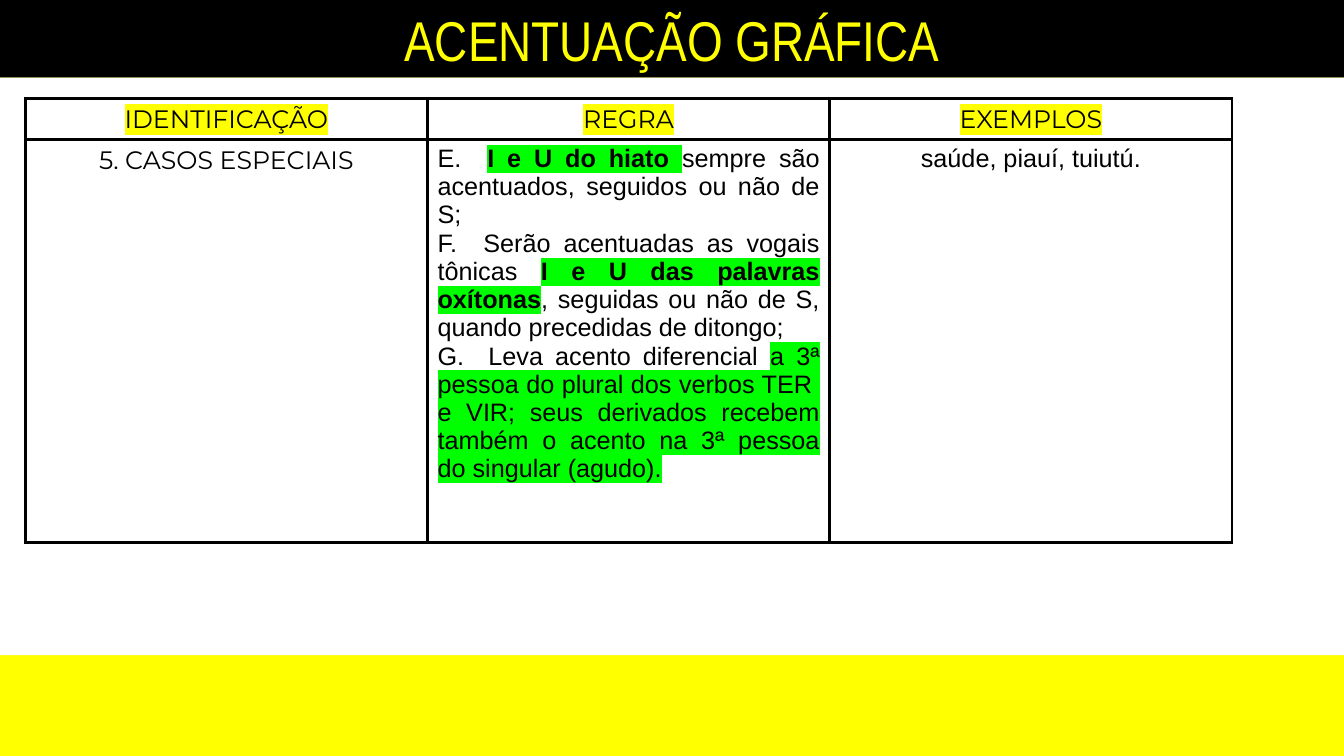
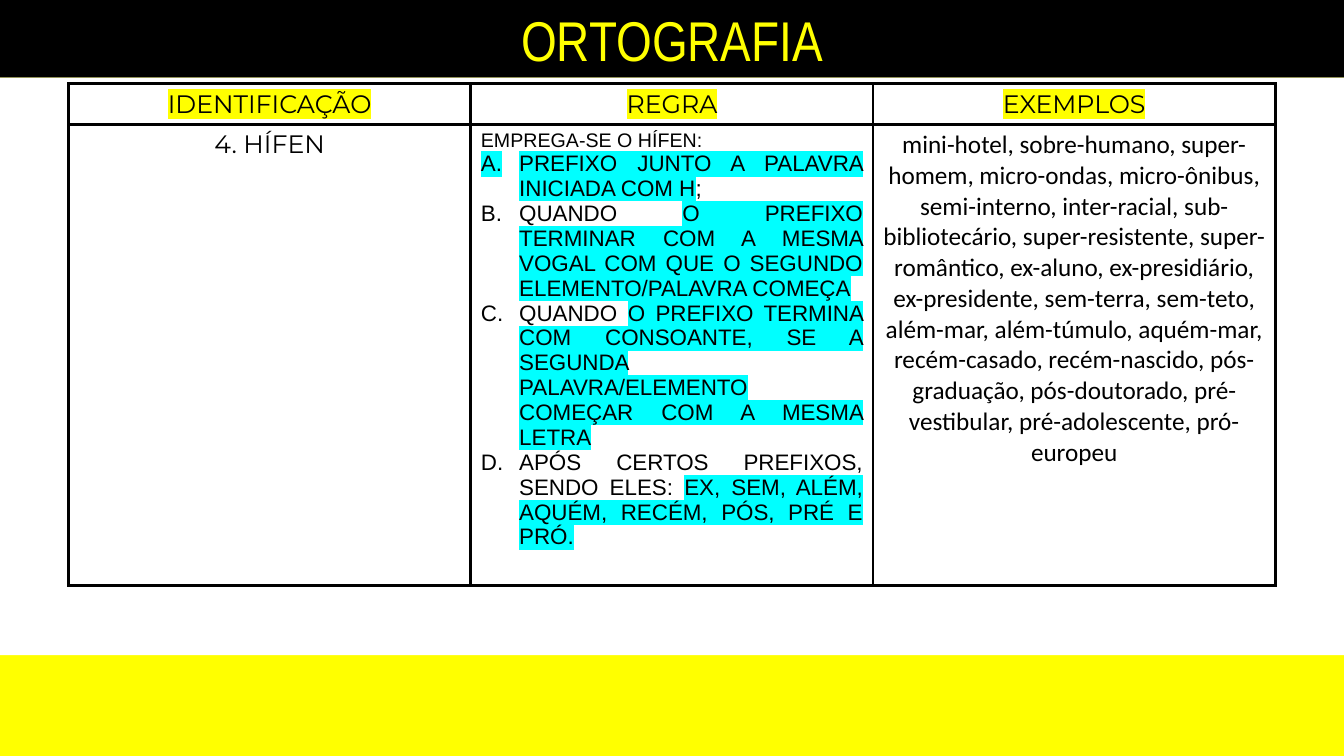
"""Build two Portuguese grammar slides, each a titled table of rules and examples."""
from dataclasses import dataclass
from typing import Optional

from lxml.etree import SubElement
from pptx import Presentation
from pptx.dml.color import RGBColor
from pptx.enum.shapes import MSO_SHAPE
from pptx.enum.text import MSO_ANCHOR, MSO_AUTO_SIZE, PP_ALIGN
from pptx.oxml.ns import qn
from pptx.util import Inches, Pt

BLACK, WHITE, YELLOW = "000000", "FFFFFF", "FFFF00"
GREEN, CYAN = "00FF00", "00FFFF"
WIDTH, HEIGHT = 13.33, 7.5
BAND_HEIGHT, PANEL_BOTTOM = 0.77, 6.5
COLUMN_WIDTH, HEADER_HEIGHT = 3.99, 0.4
LIST_INDENT = 0.38
BORDER_POINTS = 2.25
HEADINGS = ("IDENTIFICAÇÃO", "REGRA", "EXEMPLOS")


@dataclass(frozen=True)
class Span:
    text: str
    highlight: Optional[str] = None
    bold: bool = False


@dataclass(frozen=True)
class Line:
    spans: tuple[Span, ...]
    size: int = 18
    font: str = "Arial"
    align: PP_ALIGN = PP_ALIGN.JUSTIFY
    lettered: bool = False


@dataclass(frozen=True)
class Lesson:
    title: str
    left: float
    top: float
    body_height: float
    topic: str
    rules: tuple[Line, ...]
    examples: Line


def rgb(code: str) -> RGBColor:
    return RGBColor.from_string(code)


def paint(target, code: str) -> None:
    target.fill.solid()
    target.fill.fore_color.rgb = rgb(code)


def add_text(paragraph, text: str, *, size: int, font: str, color: str = BLACK,
             bold: bool = False, highlight: Optional[str] = None) -> None:
    run = paragraph.add_run()
    run.text = text
    run.font.size, run.font.name, run.font.bold = Pt(size), font, bold
    run.font.color.rgb = rgb(color)
    if highlight:
        properties = run.font._element
        marker = SubElement(properties, qn("a:highlight"))
        SubElement(marker, qn("a:srgbClr"), val=highlight)
        properties.find(qn("a:solidFill")).addnext(marker)


def letter(paragraph) -> None:
    properties = paragraph._p.get_or_add_pPr()
    properties.set("marL", str(Inches(LIST_INDENT)))
    properties.set("indent", str(-Inches(LIST_INDENT)))
    SubElement(properties, qn("a:buFont"), typeface="+mj-lt")
    SubElement(properties, qn("a:buAutoNum"), type="alphaUcPeriod")


def fill_cell(cell, lines: tuple[Line, ...]) -> None:
    properties = cell._tc.get_or_add_tcPr()
    for side in ("lnL", "lnR", "lnT", "lnB"):
        border = SubElement(properties, qn(f"a:{side}"), w=str(Pt(BORDER_POINTS)))
        SubElement(SubElement(border, qn("a:solidFill")), qn("a:srgbClr"), val=BLACK)
    paint(cell, WHITE)
    for index, line in enumerate(lines):
        frame = cell.text_frame
        paragraph = frame.add_paragraph() if index else frame.paragraphs[0]
        paragraph.alignment = line.align
        if line.lettered:
            letter(paragraph)
        for span in line.spans:
            add_text(paragraph, span.text, size=line.size, font=line.font,
                     bold=span.bold, highlight=span.highlight)


def centred(text: str, font: str = "Montserrat", highlight: Optional[str] = None) -> Line:
    return Line((Span(text, highlight),), font=font, align=PP_ALIGN.CENTER)


def item(*spans: Span) -> Line:
    return Line(spans, size=16, lettered=True)


def add_frame(slide, title: str) -> None:
    panel = slide.shapes.add_shape(
        MSO_SHAPE.RECTANGLE, 0, Inches(BAND_HEIGHT),
        Inches(WIDTH), Inches(PANEL_BOTTOM - BAND_HEIGHT))
    panel.shadow.inherit = False
    paint(panel, WHITE)
    panel.line.fill.background()

    band = slide.shapes.title
    band.left, band.top = 0, 0
    band.width, band.height = Inches(WIDTH), Inches(BAND_HEIGHT)
    paint(band, BLACK)
    frame = band.text_frame
    frame.auto_size = MSO_AUTO_SIZE.NONE
    frame.word_wrap = True
    frame.vertical_anchor = MSO_ANCHOR.MIDDLE
    heading = frame.paragraphs[0]
    heading.alignment = PP_ALIGN.CENTER
    add_text(heading, title, size=40, font="Arial Narrow", color=YELLOW)


def add_lesson(deck, lesson: Lesson) -> None:
    slide = deck.slides.add_slide(deck.slide_layouts.get_by_name("Title Only"))
    add_frame(slide, lesson.title)
    rows = (
        tuple((centred(name, highlight=YELLOW),) for name in HEADINGS),
        ((centred(lesson.topic),), lesson.rules, (lesson.examples,)),
    )
    heights = (HEADER_HEIGHT, lesson.body_height)
    table = slide.shapes.add_table(
        len(rows), len(HEADINGS), Inches(lesson.left), Inches(lesson.top),
        Inches(COLUMN_WIDTH * len(HEADINGS)), Inches(sum(heights))).table
    table.first_row = table.horz_banding = False
    for column in table.columns:
        column.width = Inches(COLUMN_WIDTH)
    for row, height, contents in zip(table.rows, heights, rows):
        row.height = Inches(height)
        for cell, lines in zip(row.cells, contents):
            fill_cell(cell, lines)


LESSONS = (
    Lesson(
        "ACENTUAÇÃO GRÁFICA", 0.25, 0.98, 4.0, "5. CASOS ESPECIAIS",
        (
            Line((Span("E.  "), Span("I e U do hiato ", GREEN, True),
                  Span("sempre são acentuados, seguidos ou não de S;"))),
            Line((Span("F.  Serão acentuadas as vogais tônicas "),
                  Span("I e U das palavras oxítonas", GREEN, True),
                  Span(", seguidas ou não de S, quando precedidas de ditongo;"))),
            Line((Span("G.  Leva acento diferencial "),
                  Span("a 3ª pessoa do plural dos verbos TER  e VIR; seus derivados "
                       "recebem também o acento na 3ª pessoa do singular (agudo).",
                       GREEN))),
        ),
        centred("saúde, piauí, tuiutú.", "Arial"),
    ),
    Lesson(
        "ORTOGRAFIA", 0.68, 0.83, 4.57, "4. HÍFEN",
        (
            Line((Span("EMPREGA-SE O HÍFEN:"),), size=14),
            item(Span("PREFIXO JUNTO A PALAVRA INICIADA COM H", CYAN), Span(";")),
            item(Span("QUANDO "),
                 Span("O PREFIXO TERMINAR COM A MESMA VOGAL COM QUE O SEGUNDO "
                      "ELEMENTO/PALAVRA COMEÇA", CYAN)),
            item(Span("QUANDO "),
                 Span("O PREFIXO TERMINA COM CONSOANTE, SE A SEGUNDA "
                      "PALAVRA/ELEMENTO COMEÇAR COM A MESMA LETRA", CYAN)),
            item(Span("APÓS CERTOS PREFIXOS, SENDO ELES: "),
                 Span("EX, SEM, ALÉM, AQUÉM, RECÉM, PÓS, PRÉ E PRÓ.", CYAN)),
        ),
        centred("mini-hotel, sobre-humano, super-homem, micro-ondas, micro-ônibus, "
                "semi-interno, inter-racial, sub-bibliotecário, super-resistente, "
                "super-romântico, ex-aluno, ex-presidiário, ex-presidente, sem-terra, "
                "sem-teto, além-mar, além-túmulo, aquém-mar, recém-casado, "
                "recém-nascido, pós-graduação, pós-doutorado, pré-vestibular, "
                "pré-adolescente, pró-europeu", "Calibri"),
    ),
)


def main() -> None:
    deck = Presentation()
    deck.slide_width, deck.slide_height = Inches(WIDTH), Inches(HEIGHT)
    paint(deck.slide_master.background, YELLOW)
    for lesson in LESSONS:
        add_lesson(deck, lesson)
    deck.save("out.pptx")


if __name__ == "__main__":
    main()
